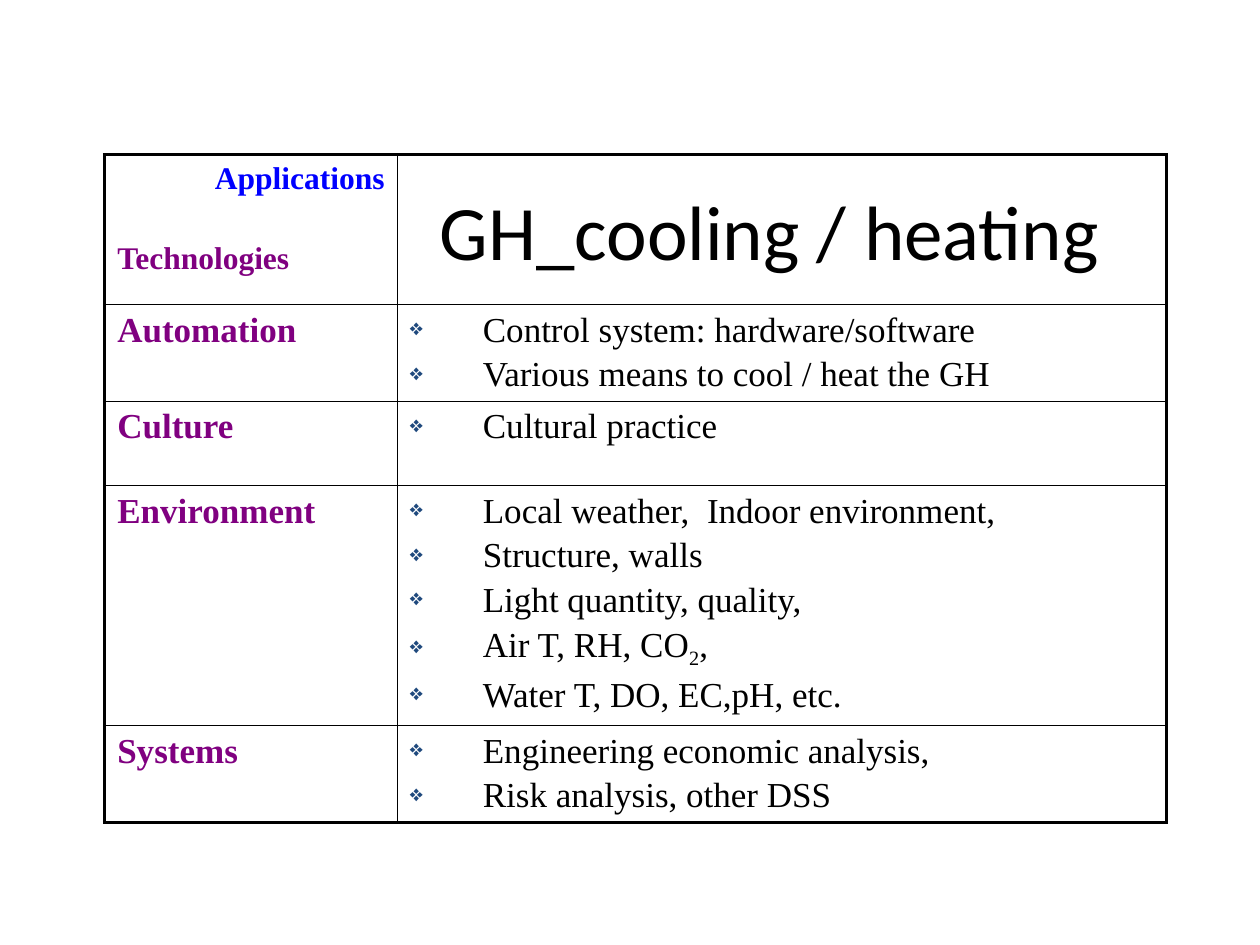
from lxml import etree
from pptx import Presentation
from pptx.dml.color import RGBColor
from pptx.enum.text import MSO_ANCHOR, PP_ALIGN
from pptx.oxml.ns import qn
from pptx.util import Cm, Pt

BLACK = RGBColor(0x00, 0x00, 0x00)
BLUE = RGBColor(0x00, 0x00, 0xFF)
PURPLE = RGBColor(0x80, 0x00, 0x80)
NAVY = RGBColor(0x1F, 0x49, 0x7D)
LEFT, RIGHT, CENTER = PP_ALIGN.LEFT, PP_ALIGN.RIGHT, PP_ALIGN.CENTER
MIDDLE = MSO_ANCHOR.MIDDLE
SERIF = "Times New Roman"

TITLE = "GH_cooling / heating"
HEADER = [("Applications", BLUE, RIGHT, 0), ("Technologies", PURPLE, LEFT, 26)]
HEADER_HEIGHT = 3.02
# Technology, row height in cm, points; a tuple alternates normal and subscript text
TECHNOLOGIES = [
    ("Automation", 1.95, ["Control system: hardware/software",
                          "Various means to cool / heat the GH"]),
    ("Culture", 1.7, ["Cultural practice"]),
    ("Environment", 4.84, ["Local weather,  Indoor environment,",
                           "Structure, walls",
                           "Light quantity, quality,",
                           ("Air T, RH, CO", "2", ","),
                           "Water T, DO, EC,pH, etc."]),
    ("Systems", 1.95, ["Engineering economic analysis,",
                       "Risk analysis, other DSS"]),
]
COLUMN_WIDTHS = [5.9, 15.5]
OUTER_LINE, INNER_LINE = Pt(2.25), Pt(1)
BULLET_INDENT = Cm(1.47)


def add_element(parent, tag, **attributes):
    return etree.SubElement(parent, qn(tag), attributes)


def style(paragraph, size, color, name=SERIF, bold=False, align=LEFT, before=0):
    paragraph.alignment = align
    paragraph.space_before = Pt(before)
    font = paragraph.font
    font.name, font.size, font.bold = name, Pt(size), bold
    font.color.rgb = color


def add_bullet(paragraph):
    properties = paragraph._p.get_or_add_pPr()
    properties.set("marL", str(BULLET_INDENT))
    properties.set("indent", str(-BULLET_INDENT))
    color = add_element(properties, "a:buClr")
    add_element(color, "a:srgbClr", val=str(NAVY))
    add_element(properties, "a:buSzPct", val="65000")
    add_element(properties, "a:buChar", char="❖")


def set_borders(cell, outer_sides):
    """Draw four borders, placed ahead of the cell's fill as the schema asks."""
    properties = cell._tc.get_or_add_tcPr()
    for position, side in enumerate("LRTB"):
        width = OUTER_LINE if side in outer_sides else INNER_LINE
        line = etree.Element(qn(f"a:ln{side}"), w=str(width))
        fill = add_element(line, "a:solidFill")
        add_element(fill, "a:srgbClr", val=str(BLACK))
        properties.insert(position, line)


def next_paragraph(frame, index):
    return frame.add_paragraph() if index else frame.paragraphs[0]


def fill_header(cell):
    for index, (text, color, align, before) in enumerate(HEADER):
        para = next_paragraph(cell.text_frame, index)
        para.add_run().text = text
        style(para, 18, color, bold=True, align=align, before=before)


def fill_points(cell, points):
    for index, point in enumerate(points):
        para = next_paragraph(cell.text_frame, index)
        add_bullet(para)
        style(para, 20, BLACK, before=3.3 if index else 0)
        parts = (point,) if isinstance(point, str) else point
        for number, text in enumerate(parts):
            span = para.add_run()
            span.text = text
            if number % 2:
                span.font._element.set("baseline", "-25000")


def add_technology_table(page):
    heights = [HEADER_HEIGHT] + [height for _, height, _ in TECHNOLOGIES]
    table = page.shapes.add_table(
        len(heights), len(COLUMN_WIDTHS), Cm(2.11), Cm(3.12),
        Cm(sum(COLUMN_WIDTHS)), Cm(sum(heights))).table
    for column, width in zip(table.columns, COLUMN_WIDTHS):
        column.width = Cm(width)
    for row, height in zip(table.rows, heights):
        row.height = Cm(height)

    last_row = len(heights) - 1
    for row_index, row in enumerate(table.rows):
        for cell, sides in zip(row.cells, "LR"):
            cell.fill.background()
            sides += "T" if row_index == 0 else ""
            sides += "B" if row_index == last_row else ""
            set_borders(cell, sides)

    fill_header(table.cell(0, 0))
    for row_index, (name, _, points) in enumerate(TECHNOLOGIES, start=1):
        para = table.cell(row_index, 0).text_frame.paragraphs[0]
        para.add_run().text = name
        style(para, 20, PURPLE, bold=True)
        fill_points(table.cell(row_index, 1), points)


def add_title(page):
    box = page.shapes.add_textbox(Cm(8.3), Cm(3.53), Cm(14.43), Cm(2.2))
    frame = box.text_frame
    frame.word_wrap = True
    frame.vertical_anchor = MIDDLE
    para = frame.paragraphs[0]
    para.add_run().text = TITLE
    style(para, 44, BLACK, name="Calibri", align=CENTER)


def main():
    deck = Presentation()
    deck.slide_width, deck.slide_height = Cm(25.4), Cm(19.05)
    page = deck.slides.add_slide(deck.slide_layouts[6])
    add_technology_table(page)
    add_title(page)
    deck.save("out.pptx")


if __name__ == "__main__":
    main()
